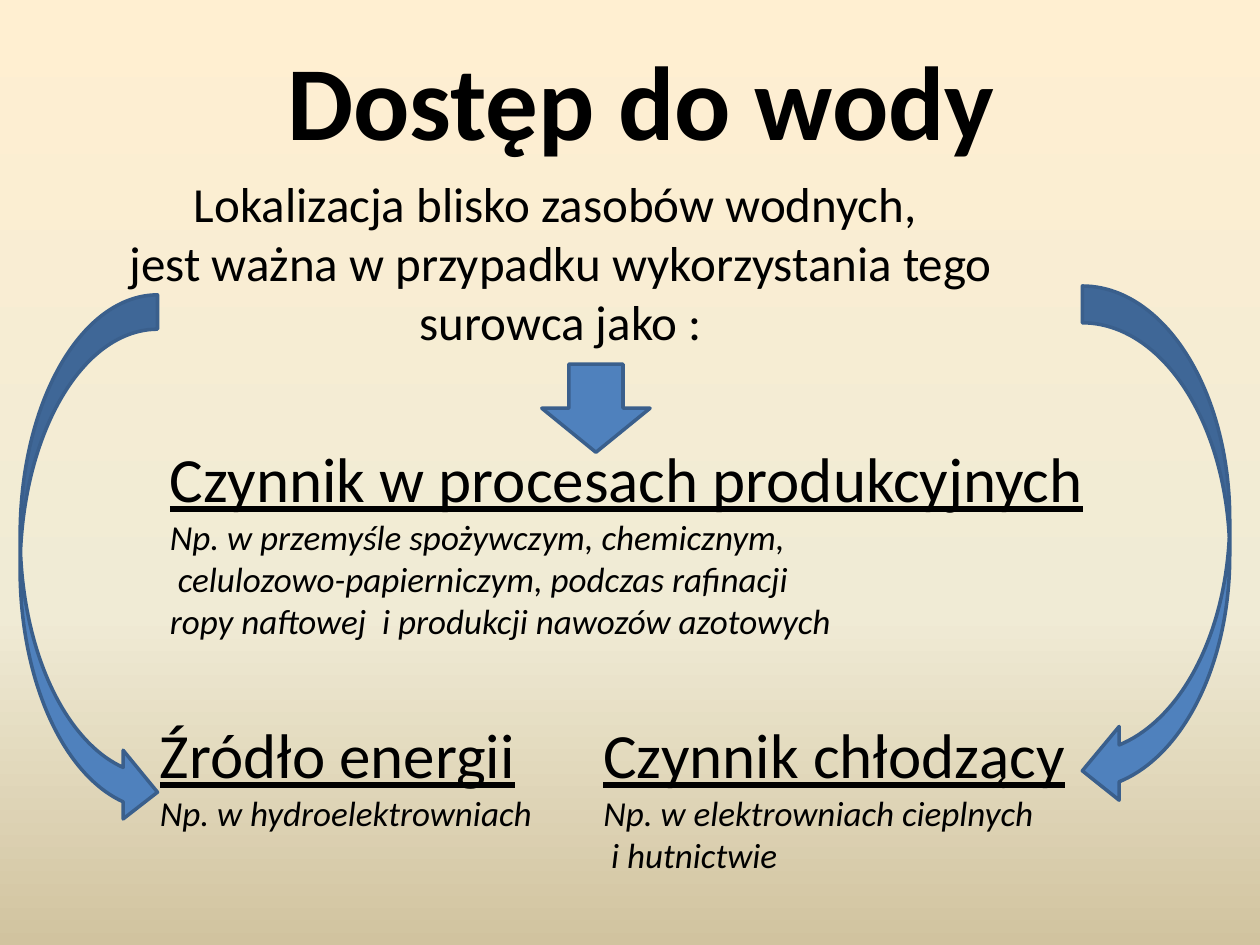
from lxml.etree import SubElement
from pptx import Presentation
from pptx.dml.color import RGBColor
from pptx.enum.shapes import MSO_SHAPE
from pptx.enum.text import PP_ALIGN
from pptx.oxml.ns import qn
from pptx.util import Inches, Pt

COLORS = {"text": "000000", "arrow": "4F81BD", "outline": "3A5F8C",
          "top": "FFEFD1", "middle": "F0EBD5", "bottom": "D1C39F"}
TITLE = {"size": Pt(60), "bold": True}
INTRO = {"size": Pt(28)}
HEADING = {"size": Pt(36), "underline": True}
EXAMPLE = {"size": Pt(20), "italic": True}


class Deck:
    """Places elements on a grid of 100 columns and 75 rows."""
    font = "Calibri"

    def __init__(self, width=10, height=7.5):
        self.prs = Presentation()
        self.prs.slide_width, self.prs.slide_height = Inches(width), Inches(height)
        self.col, self.row = self.prs.slide_width / 100, self.prs.slide_height / 75

    def add_slide(self):
        self.s = self.prs.slides.add_slide(self.prs.slide_layouts[6])

    def box(self, left, top, width, height):
        return (round(left * self.col), round(top * self.row),
                round(width * self.col), round(height * self.row))

    def color(self, name):
        return RGBColor.from_string(COLORS[name])

    def background(self, stops):
        """Fill the slide from top to bottom with (percent, colour name) stops."""
        fill = self.s.background.fill
        fill.gradient()
        fill.gradient_angle = 270
        gs_list = next(self.s.element.iter(qn("a:gsLst")))
        for gs in list(gs_list):
            gs_list.remove(gs)
        for percent, name in stops:
            gs = SubElement(gs_list, qn("a:gs"), pos=str(percent * 1000))
            SubElement(gs, qn("a:srgbClr"), val=COLORS[name])

    def text(self, grid, lines, align=PP_ALIGN.LEFT, wrap=False, indent=1):
        """Write (text, format) lines, indented by a number of columns."""
        tf = self.s.shapes.add_textbox(*self.box(*grid)).text_frame
        tf.word_wrap = wrap
        tf.margin_left = round(indent * self.col)
        for i, (words, style) in enumerate(lines):
            p = tf.add_paragraph() if i else tf.paragraphs[0]
            p.alignment = align
            r = p.add_run()
            r.text = words
            r.font.name = self.font
            r.font.color.rgb = self.color("text")
            for key, value in style.items():
                setattr(r.font, key, value)

    def topic(self, grid, heading, *examples):
        self.text(grid, [(heading, HEADING)] + [(e, EXAMPLE) for e in examples])

    def arrow(self, kind, grid):
        sp = self.s.shapes.add_shape(kind, *self.box(*grid))
        sp.shadow.inherit = False
        sp.fill.solid()
        sp.fill.fore_color.rgb = self.color("arrow")
        sp.line.color.rgb = self.color("outline")
        sp.line.width = Pt(2)


def main():
    deck = Deck()
    deck.add_slide()
    deck.background([(0, "top"), (65, "middle"), (100, "bottom")])

    deck.text((18, 2.3, 64.5, 11.1), [("Dostęp do wody", TITLE)], indent=4.8)
    deck.text((3.1, 13.3, 82.8, 15.1),
              [("Lokalizacja blisko zasobów wodnych, ", INTRO),
               ("jest ważna w przypadku wykorzystania tego surowca jako :", INTRO)],
              align=PP_ALIGN.CENTER, wrap=True)

    deck.topic((11.7, 56.3, 32, 10.4), "Źródło energii", "Np. w hydroelektrowniach")
    deck.topic((12.5, 34.4, 75.2, 17.2), "Czynnik w procesach produkcyjnych",
               "Np. w przemyśle spożywczym, chemicznym,",
               " celulozowo-papierniczym, podczas rafinacji",
               "ropy naftowej  i produkcji nawozów azotowych")
    deck.topic((46.9, 56.3, 39, 13.8), "Czynnik chłodzący",
               "Np. w elektrowniach cieplnych", " i hutnictwie")

    deck.arrow(MSO_SHAPE.DOWN_ARROW, (43, 28.9, 8.6, 7))
    deck.arrow(MSO_SHAPE.CURVED_LEFT_ARROW, (85.9, 22.7, 11.7, 41.4))
    deck.arrow(MSO_SHAPE.CURVED_RIGHT_ARROW, (1.6, 23.4, 10.9, 42.2))
    deck.prs.save("out.pptx")


if __name__ == "__main__":
    main()
